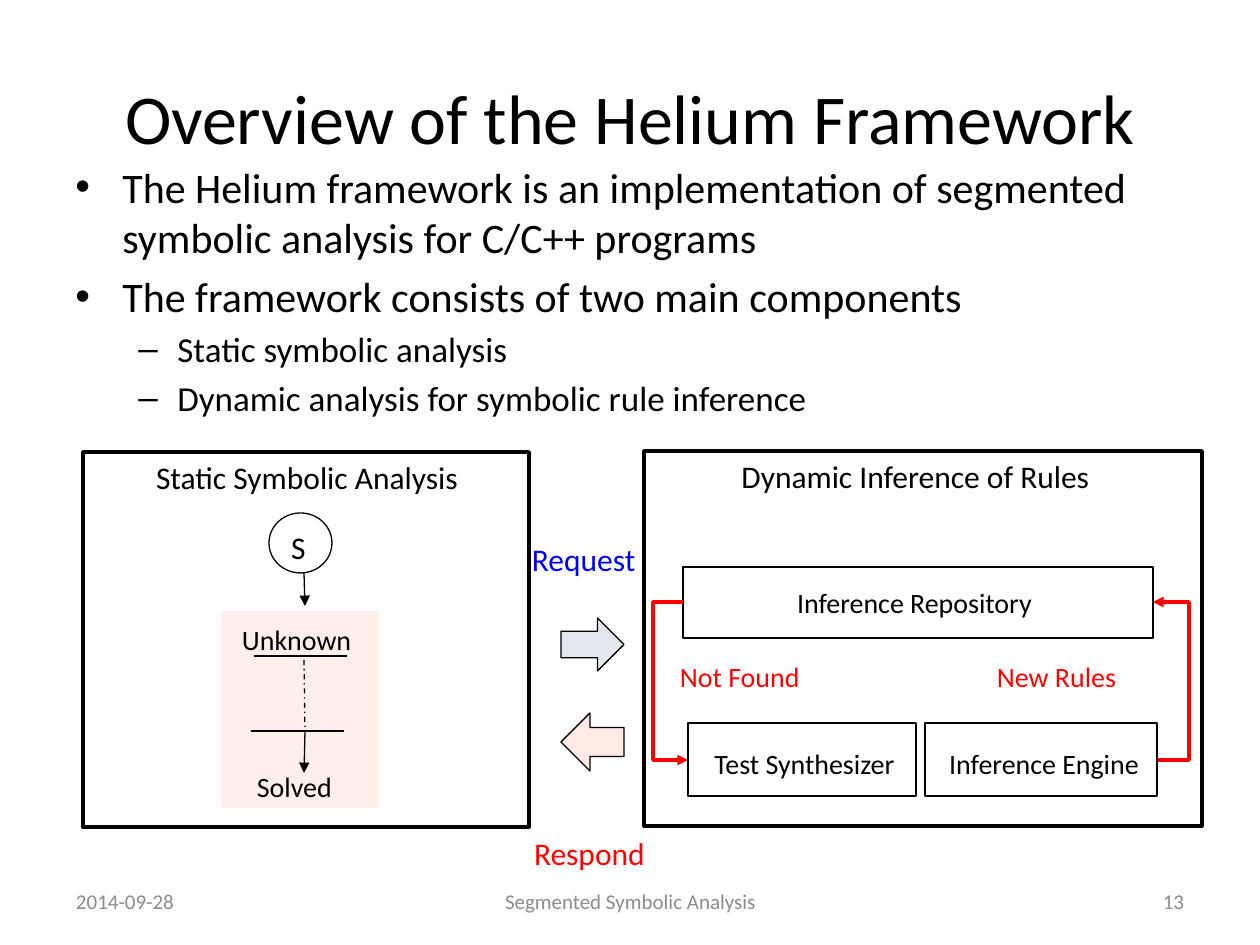
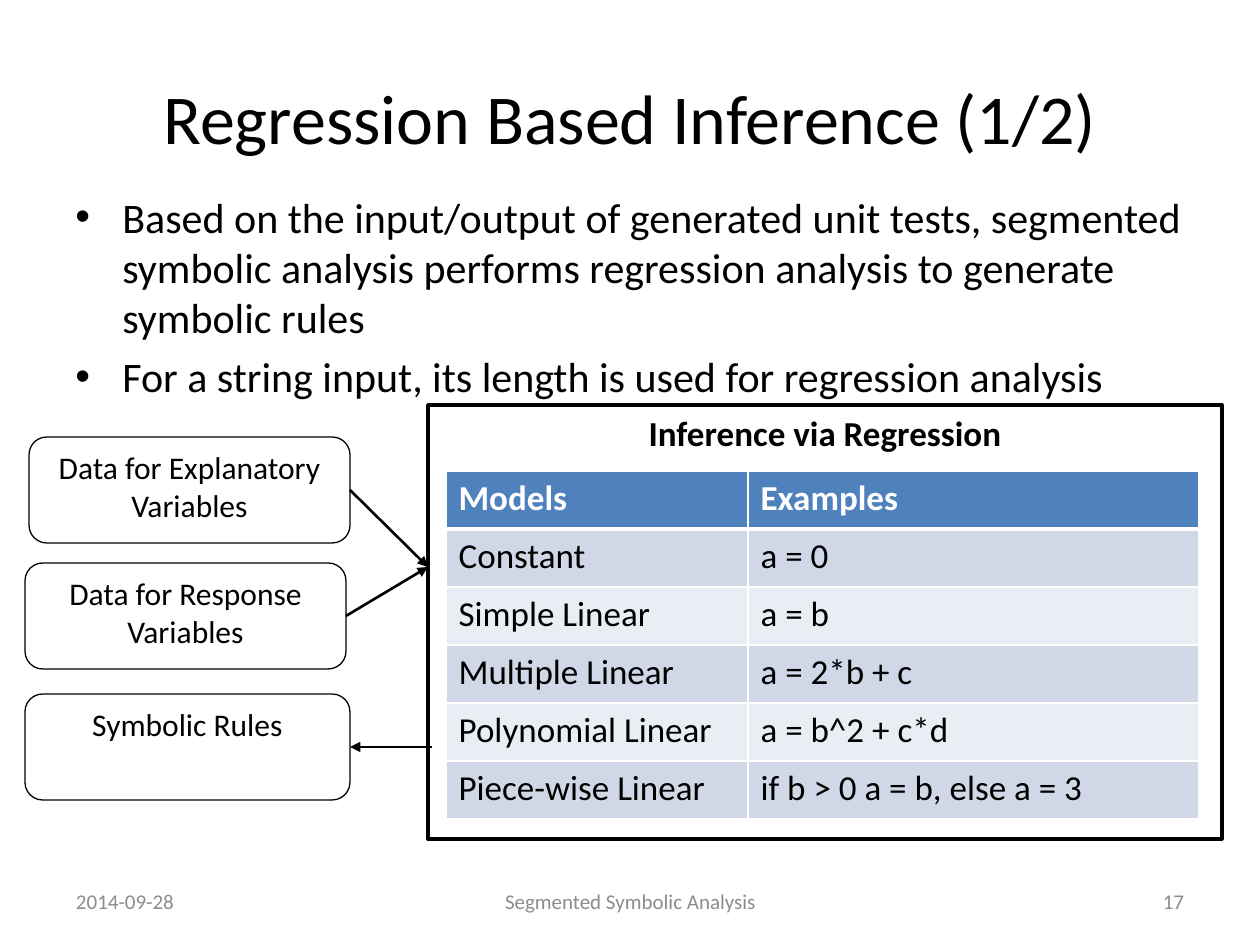
from lxml.etree import SubElement
from pptx import Presentation
from pptx.dml.color import RGBColor
from pptx.enum.dml import MSO_LINE
from pptx.enum.shapes import MSO_CONNECTOR as CONNECTOR, MSO_SHAPE as SHAPE
from pptx.enum.text import MSO_ANCHOR as ANCHOR, PP_ALIGN as ALIGN
from pptx.oxml.ns import qn
from pptx.util import Emu, Pt

PX_PER_INCH = 126
FONT = "Calibri"
BLACK = RGBColor(0x00, 0x00, 0x00)
WHITE = RGBColor(0xFF, 0xFF, 0xFF)
GREY = RGBColor(0x8C, 0x8C, 0x8C)
RED = RGBColor(0xFF, 0x00, 0x00)
BLUE = RGBColor(0x00, 0x00, 0xFF)
NAVY = RGBColor(0x00, 0x20, 0x60)
ORANGE = RGBColor(0xFF, 0x33, 0x00)
HEADER_BLUE = RGBColor(0x4F, 0x81, 0xBD)
BAND_DARK = RGBColor(0xD0, 0xD8, 0xE8)
BAND_LIGHT = RGBColor(0xE9, 0xED, 0xF4)

# Bullet levels: character, text size, indent and hanging width in px
BULLETS = [("•", 24, 47, 47), ("–", 20, 102, 39)]
INSETS = (13, 6, 13, 6)


def px(length):
    return Emu(round(length * 914400 / PX_PER_INCH))


def box_px(box):
    return [px(length) for length in box]


# ---- Basic parts ----

def style_paragraph(paragraph, size, color=BLACK, align=ALIGN.LEFT, bold=False):
    paragraph.alignment = align
    font = paragraph.font
    font.name, font.size, font.bold = FONT, Pt(size), bold
    font.color.rgb = color


def write_text(shape, text, size, color=BLACK, align=ALIGN.LEFT,
               anchor=ANCHOR.TOP, bold=False, insets=INSETS):
    frame = shape.text_frame
    frame.word_wrap = True
    frame.vertical_anchor = anchor
    (frame.margin_left, frame.margin_top,
     frame.margin_right, frame.margin_bottom) = box_px(insets)
    frame.text = text
    style_paragraph(frame.paragraphs[0], size, color, align, bold)


def add_label(slide, box, text, size, **style):
    label = slide.shapes.add_textbox(*box_px(box))
    write_text(label, text, size, **style)


def add_box(slide, kind, box, fill=None, opacity=100, line_width=0.75):
    shape = slide.shapes.add_shape(kind, *box_px(box))
    shape.shadow.inherit = False
    if fill is None:
        shape.fill.background()
    else:
        shape.fill.solid()
        shape.fill.fore_color.rgb = fill
        if opacity < 100:
            color = next(shape.element.spPr.iter(qn("a:srgbClr")))
            SubElement(color, qn("a:alpha"), val=str(opacity * 1000))
    if line_width:
        shape.line.color.rgb = BLACK
        shape.line.width = Pt(line_width)
    else:
        shape.line.fill.background()
    return shape


def add_line(slide, start, end, width=0.75, color=BLACK, arrow=False,
             dash=None, bend_x=None):
    """Straight line, or an elbow that turns at bend_x."""
    kind = CONNECTOR.STRAIGHT if bend_x is None else CONNECTOR.ELBOW
    connector = slide.shapes.add_connector(kind, *box_px(start + end))
    connector.line.color.rgb = color
    connector.line.width = Pt(width)
    if dash:
        connector.line.dash_style = dash
    if arrow:
        SubElement(connector.get_or_add_ln(), qn("a:tailEnd"), type="triangle")
    properties = connector.element.spPr
    SubElement(properties, qn("a:effectLst"))
    if bend_x is not None:
        ratio = (bend_x - start[0]) / (end[0] - start[0])
        adjustments = next(properties.iter(qn("a:avLst")))
        SubElement(adjustments, qn("a:gd"), name="adj1",
                   fmla=f"val {round(ratio * 100000)}")


# ---- Shared slide frame ----

def add_framed_slide(presentation, title, number):
    slide = presentation.slides.add_slide(presentation.slide_layouts[6])
    add_label(slide, (63, 38, 1134, 158), title, 40,
              align=ALIGN.CENTER, anchor=ANCHOR.MIDDLE)
    footers = [(63, 294, "2014-09-28", ALIGN.LEFT),
               (431, 399, "Segmented Symbolic Analysis", ALIGN.CENTER),
               (903, 294, str(number), ALIGN.RIGHT)]
    for left, width, text, align in footers:
        add_label(slide, (left, 876, width, 50), text, 12, color=GREY,
                  align=align, anchor=ANCHOR.MIDDLE)
    return slide


def add_bullets(slide, box, items):
    body = slide.shapes.add_textbox(*box_px(box))
    frame = body.text_frame
    frame.word_wrap = True
    for index, (level, text) in enumerate(items):
        character, size, indent, hanging = BULLETS[level]
        paragraph = frame.add_paragraph() if index else frame.paragraphs[0]
        paragraph.text = text
        paragraph.level = level
        style_paragraph(paragraph, size)
        if index:
            paragraph.space_before = Pt(size * 0.2)
        properties = paragraph._p.get_or_add_pPr()
        properties.set("marL", str(px(indent)))
        properties.set("indent", str(px(-hanging)))
        SubElement(properties, qn("a:buFont"), typeface="Arial")
        SubElement(properties, qn("a:buChar"), char=character)


# ---- Framework overview ----

def add_panel(slide, box, title, title_width):
    left, top, _, _ = box
    add_box(slide, SHAPE.RECTANGLE, box, line_width=2)
    add_label(slide, (left, top, title_width, 50), title, 18, align=ALIGN.CENTER)


def add_static_analysis(slide, box):
    left, top, _, _ = box
    add_panel(slide, box, "Static Symbolic Analysis", 448)
    add_box(slide, SHAPE.RECTANGLE, (left + 138, top + 159, 158, 197),
            fill=ORANGE, opacity=8, line_width=0)
    # Start node
    node = add_box(slide, SHAPE.OVAL, (left + 186, top + 61, 63, 60), fill=WHITE)
    write_text(node, "S", 18)
    # Path from unknown to solved
    add_label(slide, (left + 146, top + 165, 158, 47), "Unknown", 16)
    add_label(slide, (left + 161, top + 312, 111, 47), "Solved", 16)
    for bar_left, bar_top in ((171, 204), (168, 279)):
        start = (left + bar_left, top + bar_top)
        add_line(slide, start, (start[0] + 93, start[1]))
    middle = left + 221
    add_line(slide, (middle, top + 121), (middle + 1, top + 154), arrow=True)
    add_line(slide, (middle, top + 208), (middle + 1, top + 279),
             dash=MSO_LINE.DASH_DOT)
    add_line(slide, (middle + 1, top + 280), (middle, top + 321), arrow=True)


def add_exchange(slide, box):
    left, top, width, _ = box
    add_label(slide, (left, top, width, 50), "Request", 18, color=BLUE)
    add_box(slide, SHAPE.RIGHT_ARROW, (left + 42, top + 84, 63, 53),
            fill=NAVY, opacity=10)
    add_box(slide, SHAPE.LEFT_ARROW, (left + 42, top + 179, 63, 58),
            fill=ORANGE, opacity=10)
    add_label(slide, (left + 2, top + 294, width, 50), "Respond", 18, color=RED)


def add_rule_inference(slide, box):
    left, top, _, _ = box
    add_panel(slide, box, "Dynamic Inference of Rules", 543)
    # Components: box in the panel, text, insets, anchor
    components = [
        ((39, 116, 470, 71), "Inference Repository", (13, 6, 20, 6), ANCHOR.MIDDLE),
        ((44, 272, 228, 73), "Test Synthesizer", (18, 24, 13, 0), ANCHOR.TOP),
        ((281, 272, 232, 73), "Inference Engine", (19, 24, 13, 0), ANCHOR.TOP)]
    for (x, y, width, height), text, insets, anchor in components:
        component = add_box(slide, SHAPE.RECTANGLE,
                            (left + x, top + y, width, height),
                            fill=WHITE, line_width=1)
        write_text(component, text, 16, align=ALIGN.CENTER,
                   anchor=anchor, insets=insets)
    # Loop between the components and the repository
    upper, lower = top + 151, top + 309
    for start, end, bend in (((39, upper), (44, lower), 9),
                             ((514, lower), (509, upper), 545)):
        add_line(slide, (left + start[0], start[1]), (left + end[0], end[1]),
                 width=2, color=RED, arrow=True, bend_x=left + bend)
    for x, text in ((23, "Not Found"), (340, "New Rules")):
        add_label(slide, (left + x, top + 203, 217, 47), text, 16, color=RED)


def build_overview(presentation):
    slide = add_framed_slide(presentation, "Overview of the Helium Framework", 13)
    add_bullets(slide, (63, 155, 1134, 176), [
        (0, "The Helium framework is an implementation of segmented "
            "symbolic analysis for C/C++ programs"),
        (0, "The framework consists of two main components"),
        (1, "Static symbolic analysis"),
        (1, "Dynamic analysis for symbolic rule inference")])
    add_static_analysis(slide, (83, 452, 446, 375))
    add_exchange(slide, (519, 534, 160, 344))
    add_rule_inference(slide, (644, 451, 558, 375))


# ---- Regression ----

def set_cell_borders(cell, bottom_width):
    properties = cell._tc.get_or_add_tcPr()
    for side, width in (("L", 1), ("R", 1), ("T", 1), ("B", bottom_width)):
        border = SubElement(properties, qn(f"a:ln{side}"), w=str(Pt(width)))
        fill = SubElement(border, qn("a:solidFill"))
        SubElement(fill, qn("a:srgbClr"), val=str(WHITE))


def add_model_table(slide, box):
    rows = [("Models", "Examples"),
            ("Constant", "a = 0"),
            ("Simple Linear", "a = b"),
            ("Multiple Linear", "a = 2*b + c"),
            ("Polynomial Linear", "a = b^2 + c*d"),
            ("Piece-wise Linear", "if b > 0 a = b, else a = 3")]
    table = slide.shapes.add_table(len(rows), 2, *box_px(box)).table
    for column, width in zip(table.columns, (302, box[2] - 302)):
        column.width = px(width)
    for row_index, row in enumerate(rows):
        header = row_index == 0
        band = BAND_DARK if row_index % 2 else BAND_LIGHT
        for column_index, text in enumerate(row):
            cell = table.cell(row_index, column_index)
            cell.text = text
            style_paragraph(cell.text_frame.paragraphs[0], 20,
                            WHITE if header else BLACK, bold=header)
            set_cell_borders(cell, 3 if header else 1)
            cell.fill.solid()
            cell.fill.fore_color.rgb = HEADER_BLUE if header else band


def add_regression_panel(slide, box):
    left, top, _, _ = box
    panel = add_box(slide, SHAPE.RECTANGLE, box, fill=WHITE, line_width=2)
    write_text(panel, "Inference via Regression", 20,
               align=ALIGN.CENTER, bold=True)
    add_model_table(slide, (left + 18, top + 66, 753, 348))


def add_data_flow(slide, box):
    left, top, width, _ = box
    nodes = [(4, 0, 321, "Data for Explanatory Variables", (0, 6, 0, 6)),
             (0, 126, 321, "Data for Response Variables", INSETS),
             (0, 257, 325, "Symbolic Rules", INSETS)]
    for x, y, node_width, text, insets in nodes:
        node = add_box(slide, SHAPE.ROUNDED_RECTANGLE,
                       (left + x, top + y, node_width, 106), fill=WHITE)
        write_text(node, text, 18, align=ALIGN.CENTER, insets=insets)
    # Both inputs meet at the panel; the rules come back
    entry = (left + width, top + 130)
    rules_y = top + 310
    for start, end in (((left + 325, top + 53), entry),
                       ((left + 321, top + 179), entry),
                       ((left + width + 4, rules_y), (left + 325, rules_y))):
        add_line(slide, start, end, width=1.5, arrow=True)


def build_regression(presentation):
    slide = add_framed_slide(presentation, "Regression Based Inference (1/2)", 17)
    add_regression_panel(slide, (428, 405, 794, 434))
    add_data_flow(slide, (25, 437, 403, 363))
    add_bullets(slide, (63, 185, 1134, 624), [
        (0, "Based on the input/output of generated unit tests, segmented "
            "symbolic analysis performs regression analysis to generate "
            "symbolic rules"),
        (0, "For a string input, its length is used for regression analysis")])


def main():
    presentation = Presentation()
    presentation.slide_width, presentation.slide_height = px(1260), px(945)
    build_overview(presentation)
    build_regression(presentation)
    presentation.save("out.pptx")


if __name__ == "__main__":
    main()
